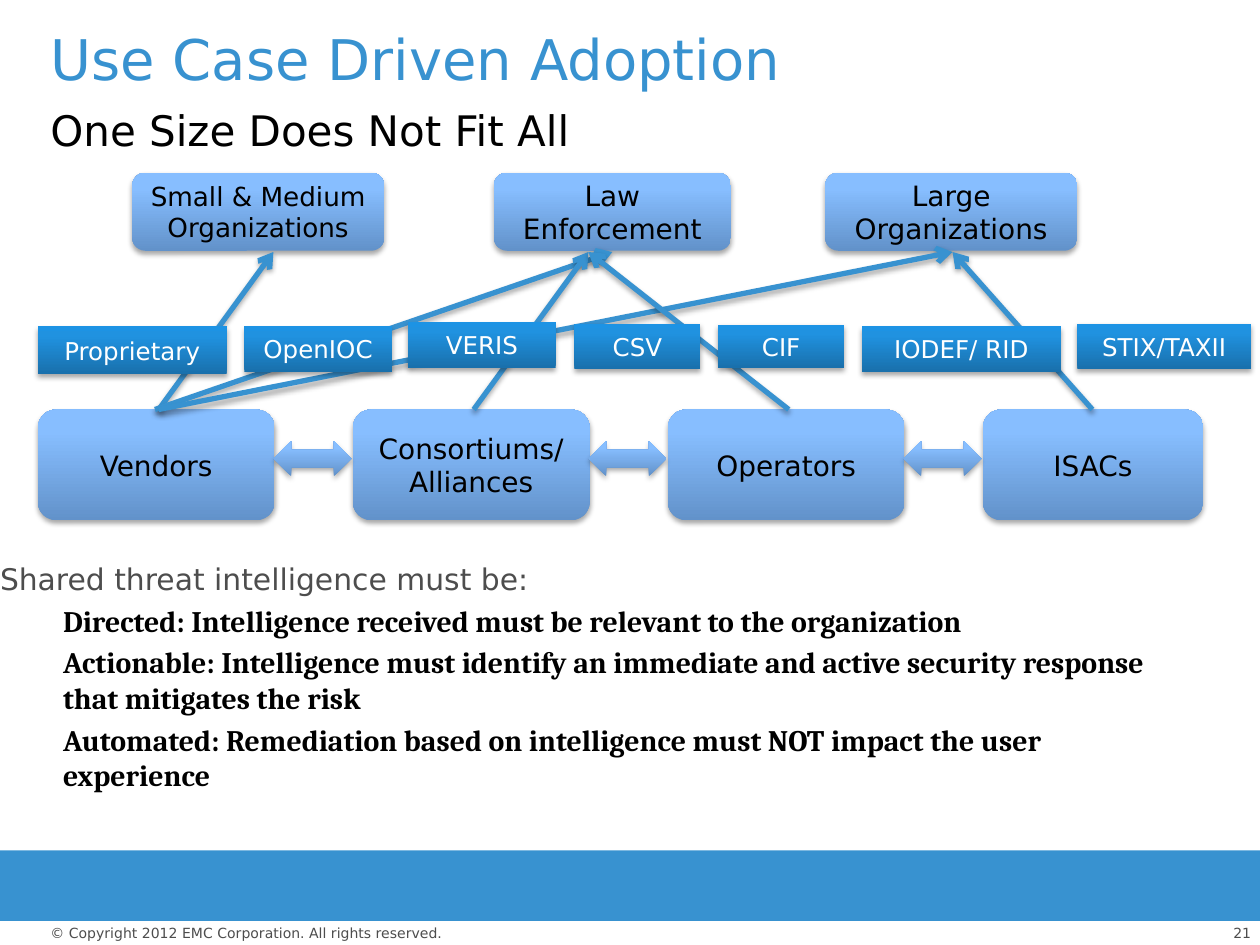
from copy import deepcopy
from pptx import Presentation
from pptx.dml.color import RGBColor
from pptx.enum.shapes import MSO_CONNECTOR, MSO_SHAPE as SHAPE
from pptx.enum.text import MSO_ANCHOR as ANCHOR, PP_ALIGN as ALIGN
from pptx.oxml import parse_xml
from pptx.oxml.ns import nsdecls, qn
from pptx.util import Inches, Pt

SANS = "DejaVu Sans"
BLUE, GREY = "3892D0", "4D4D4D"
SOFT = ["6292CA", "87BEFF", "88BFFF"]
STRONG = ["1970AC", "2092E0", "1D93E4"]
SHADOW = (
    f'<a:effectLst {nsdecls("a")}>'
    '<a:outerShdw blurRad="39370" dist="22860" dir="5400000" rotWithShape="0">'
    '<a:srgbClr val="000000"><a:alpha val="35000"/></a:srgbClr>'
    '</a:outerShdw></a:effectLst>'
)


def rgb(value):
    return RGBColor.from_string(value)


def add_block(kind, box, colors, text="", size=16, color="000000"):
    s = slide.shapes.add_shape(kind, *map(Inches, box))
    s.fill.gradient()
    s.fill.gradient_angle = 90
    stops = s._element.spPr.find(".//" + qn("a:gsLst"))
    stops.append(deepcopy(stops[-1]))
    for stop, position, value in zip(s.fill.gradient_stops, (0, 0.8, 1), colors):
        stop.position = position
        stop.color.rgb = rgb(value)
    s.line.fill.background()
    s._element.spPr.append(parse_xml(SHADOW))
    if text:
        tf = s.text_frame
        tf.word_wrap = True
        tf.vertical_anchor = ANCHOR.MIDDLE
        p = tf.paragraphs[0]
        p.text = text
        p.alignment = ALIGN.CENTER
        p.font.name = SANS
        p.font.size = Pt(size)
        p.font.color.rgb = rgb(color)


prs = Presentation()
prs.slide_width, prs.slide_height = Inches(10), Inches(7.5)
slide = prs.slides.add_slide(prs.slide_layouts[6])

band = slide.shapes.add_shape(SHAPE.RECTANGLE, 0, Inches(6.75), Inches(10), Inches(0.56))
band.fill.solid()
band.fill.fore_color.rgb = rgb(BLUE)
band.line.fill.background()
band.shadow.inherit = False

frames = []
for box in [(9.35, 7.34, 0.58, 0.13), (0.4, 7.34, 3.17, 0.13),
            (0.4, 0.22, 9.2, 1.01), (0, 4.45, 9.21, 2.24)]:
    tf = slide.shapes.add_textbox(*map(Inches, box)).text_frame
    tf.margin_left = tf.margin_right = tf.margin_top = tf.margin_bottom = 0
    tf.word_wrap = True
    frames.append(tf)
number, footer, title, body = frames

footer.word_wrap = False
for tf, text, align in [
    (number, "21", ALIGN.RIGHT),
    (footer, "© Copyright 2012 EMC Corporation. All rights reserved.", ALIGN.LEFT),
]:
    p = tf.paragraphs[0]
    p.text = text
    p.alignment = align
    p.font.name = SANS
    p.font.size = Pt(8)
    p.font.color.rgb = rgb(GREY)

title.vertical_anchor = ANCHOR.BOTTOM
p = title.paragraphs[0]
p.line_spacing = Pt(36)
p.font.name = SANS
for i, (text, size, color) in enumerate([
    ("Use Case Driven Adoption", 32, BLUE),
    ("One Size Does Not Fit All", 24, "000000"),
]):
    if i:
        p.add_line_break()
    r = p.add_run()
    r.text = text
    r.font.size = Pt(size)
    r.font.color.rgb = rgb(color)

p = body.paragraphs[0]
p.text = "Shared threat intelligence must be:"
p.font.name = SANS
p.font.size = Pt(17)
p.font.color.rgb = rgb(GREY)
for text in [
    "Directed: Intelligence received must be relevant to the organization",
    "Actionable: Intelligence must identify an immediate and active security "
    "response that mitigates the risk",
    "Automated: Remediation based on intelligence must NOT impact the user experience",
]:
    p = body.add_paragraph()
    p.text = text
    p.level = 1
    p._p.get_or_add_pPr().set("marL", str(Inches(0.5)))
    p.space_before = Pt(3.4)
    p.font.name = "Cambria"
    p.font.size = Pt(17)
    p.font.bold = True
    p.font.color.rgb = rgb("000000")

for text, x, w, size in [
    ("Small & Medium Organizations", 1.05, 2, 15),
    ("Law Enforcement", 3.92, 1.88, 16),
    ("Large Organizations", 6.55, 2, 16),
]:
    add_block(SHAPE.ROUNDED_RECTANGLE, (x, 1.37, w, 0.62), SOFT, text, size)

for i, (text, w) in enumerate([
    ("Vendors", 1.88), ("Consortiums/ Alliances", 1.88),
    ("Operators", 1.88), ("ISACs", 1.75),
]):
    x = 0.3 + 2.5 * i
    add_block(SHAPE.ROUNDED_RECTANGLE, (x, 3.25, w, 0.88), SOFT, text)
    if i:
        add_block(SHAPE.LEFT_RIGHT_ARROW, (x - 0.63, 3.5, 0.62, 0.28), SOFT)

for x1, x2 in [(1.26, 2.17), (1.23, 4.86), (1.26, 7.56),
               (3.76, 4.67), (8.67, 7.56), (6.26, 4.67)]:
    s = slide.shapes.add_connector(
        MSO_CONNECTOR.STRAIGHT, Inches(x1), Inches(3.25), Inches(x2), Inches(2))
    s.line.color.rgb = rgb(BLUE)
    s.line.width = Pt(3)
    s.line._get_or_add_ln().append(parse_xml(f'<a:tailEnd {nsdecls("a")} type="arrow"/>'))
    s._element.spPr.append(parse_xml(SHADOW))

for text, x, y, w, h in [
    ("Proprietary", 0.3, 2.59, 1.5, 0.38),
    ("OpenIOC", 1.94, 2.59, 1.17, 0.36),
    ("VERIS", 3.24, 2.56, 1.17, 0.36),
    ("CSV", 4.56, 2.57, 1, 0.36),
    ("CIF", 5.7, 2.58, 1, 0.34),
    ("IODEF/ RID", 6.84, 2.59, 1.58, 0.36),
    ("STIX/TAXII", 8.55, 2.57, 1.38, 0.36),
]:
    add_block(SHAPE.RECTANGLE, (x, y, w, h), STRONG, text, 14, "FFFFFF")

prs.save("out.pptx")
